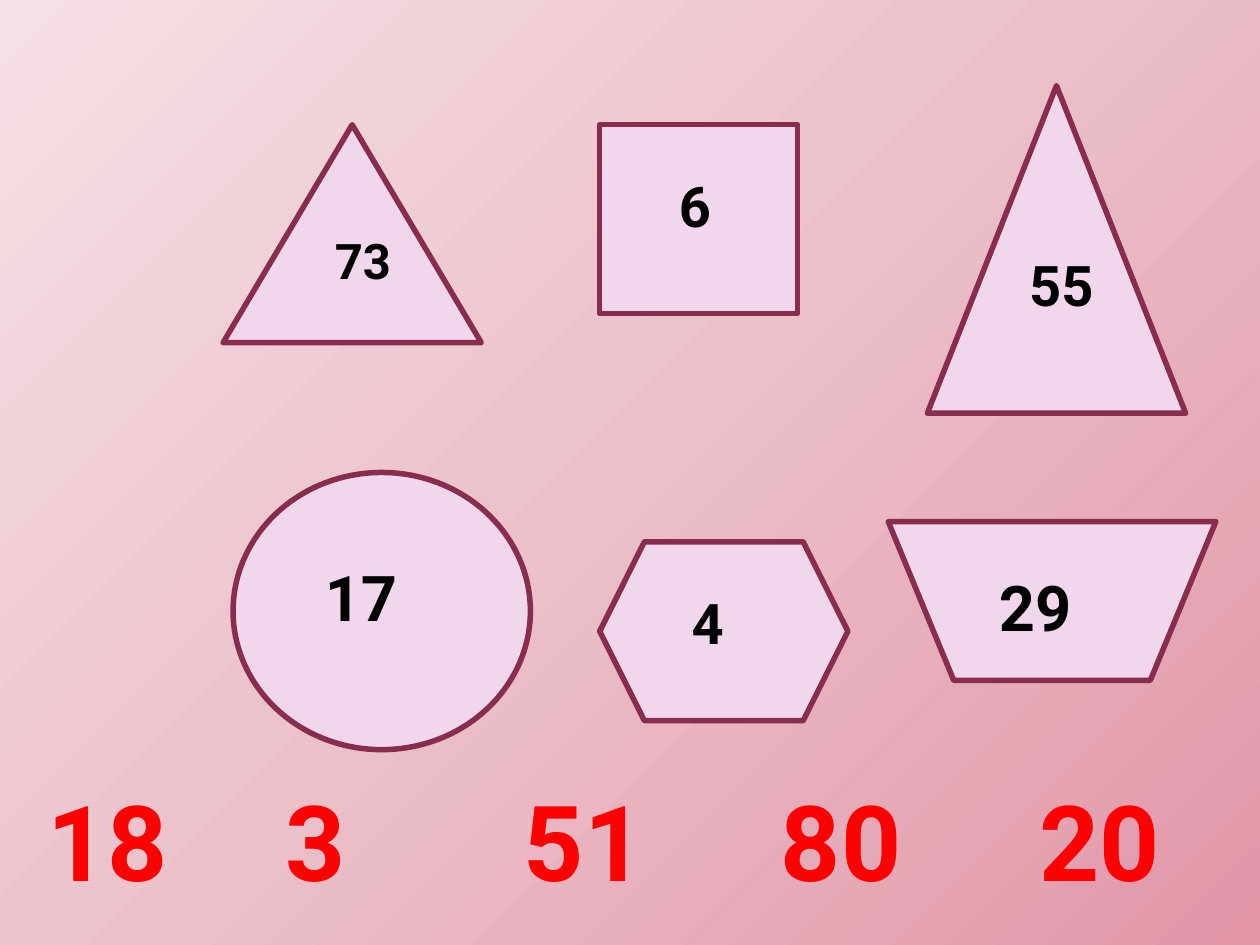
import lxml.etree
import pptx
import pptx.dml.color
import pptx.enum.shapes
import pptx.enum.text
import pptx.oxml.ns
import pptx.util
from pptx.util import Inches

FONT = "Roboto"
FIGURE_FILL, FIGURE_LINE = "F1D7EC", "882D4D"
BLACK, RED = "000000", "FF0000"
BACKDROP_STOPS = [(0, "E296A8"), (50, "EBC0C9"), (100, "F5E0E5")]

SHAPES = pptx.enum.shapes.MSO_SHAPE
LEFT = pptx.enum.text.PP_ALIGN.LEFT
CENTER = pptx.enum.text.PP_ALIGN.CENTER

# Outline, its box, then its number, the number's box, size and alignment
FIGURES = [
    (SHAPES.ISOSCELES_TRIANGLE, (1.77, 0.99, 2.05, 1.73), "73", (2.56, 1.78, 0.71, 0.57), 28, LEFT),
    (SHAPES.RECTANGLE, (4.76, 0.99, 1.57, 1.5), "6", (5.08, 1.31, 0.87, 0.64), 32, CENTER),
    (SHAPES.ISOSCELES_TRIANGLE, (7.36, 0.68, 2.05, 2.6), "55", (8.07, 1.94, 0.79, 0.64), 32, LEFT),
    (SHAPES.OVAL, (1.85, 3.75, 2.36, 2.2), "17", (2.48, 4.38, 1.1, 0.71), 36, LEFT),
    (SHAPES.HEXAGON, (4.76, 4.3, 1.97, 1.42), "4", (5.39, 4.62, 0.94, 0.64), 32, LEFT),
    (SHAPES.FLOWCHART_MANUAL_OPERATION, (7.05, 4.14, 2.6, 1.26), "29", (7.83, 4.46, 1.1, 0.71), 36, LEFT),
]
# Number, left edge and width
ANSWERS = [("18", 0.28, 1.34), ("3", 2.17, 1.18), ("51", 4.06, 1.42),
           ("80", 6.1, 1.34), ("20", 8.15, 1.26)]


def rgb(value):
    return pptx.dml.color.RGBColor.from_string(value)


def paint_backdrop(slide):
    """Fill the background with a gradient spreading from the bottom right corner."""
    qn = pptx.oxml.ns.qn
    fill = slide.background.fill
    fill.gradient()
    gradient = slide.element.find(".//" + qn("a:gradFill"))
    for child in list(gradient):
        gradient.remove(child)
    stops = lxml.etree.SubElement(gradient, qn("a:gsLst"))
    for percent, color in BACKDROP_STOPS:
        stop = lxml.etree.SubElement(stops, qn("a:gs"), pos=str(percent * 1000))
        lxml.etree.SubElement(stop, qn("a:srgbClr"), val=color)
    spread = lxml.etree.SubElement(gradient, qn("a:path"), path="circle")
    lxml.etree.SubElement(spread, qn("a:fillToRect"), l="100000", t="100000")


def add_figure(slide, outline, box):
    figure = slide.shapes.add_shape(outline, *map(Inches, box))
    figure.shadow.inherit = False
    figure.fill.solid()
    figure.fill.fore_color.rgb = rgb(FIGURE_FILL)
    figure.line.color.rgb = rgb(FIGURE_LINE)
    figure.line.width = pptx.util.Pt(3.15)


def add_number(slide, number, box, size, color, alignment=LEFT):
    frame = slide.shapes.add_textbox(*map(Inches, box)).text_frame
    frame.word_wrap = True
    frame.auto_size = pptx.enum.text.MSO_AUTO_SIZE.SHAPE_TO_FIT_TEXT
    paragraph = frame.paragraphs[0]
    paragraph.text = number
    paragraph.alignment = alignment
    paragraph.font.name = FONT
    paragraph.font.size = pptx.util.Pt(size)
    paragraph.font.bold = True
    paragraph.font.color.rgb = rgb(color)


def main():
    deck = pptx.Presentation()
    deck.slide_width, deck.slide_height = Inches(10), Inches(7.5)
    slide = deck.slides.add_slide(deck.slide_layouts[6])
    paint_backdrop(slide)
    for outline, box, number, number_box, size, alignment in FIGURES:
        add_figure(slide, outline, box)
        add_number(slide, number, number_box, size, BLACK, alignment)
    for number, left, width in ANSWERS:
        add_number(slide, number, (left, 6.11, width, 1.11), 60, RED)
    deck.save("out.pptx")


if __name__ == "__main__":
    main()
